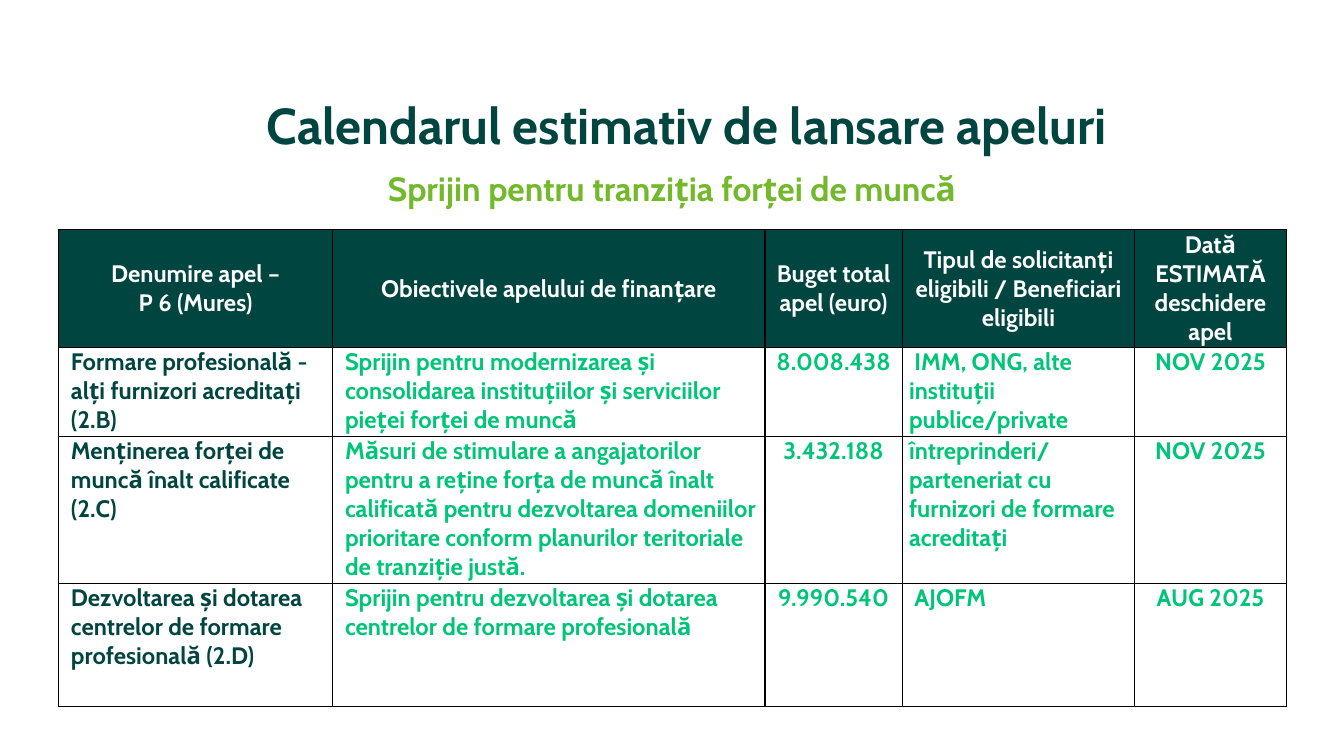
from lxml.etree import SubElement
from pptx import Presentation
from pptx.dml.color import RGBColor
from pptx.enum.text import MSO_ANCHOR, PP_ALIGN
from pptx.oxml.ns import qn
from pptx.util import Pt

COLORS = {"dark": "004540", "lime": "74B92B", "green": "00C578",
          "white": "FFFFFF", "black": "000000"}
FONT = "Cabin"

COLUMN_WIDTHS = [195.8, 308.9, 97.9, 166.3, 108]
ROW_HEIGHTS = [84.2, 63.4, 105.1, 87.8]
# Text colour, left inset and alignment of each body column
COLUMN_STYLES = [
    ("dark", 8.9, PP_ALIGN.LEFT),
    ("green", 8.9, PP_ALIGN.LEFT),
    ("green", 0, PP_ALIGN.CENTER),
    ("green", 5, PP_ALIGN.LEFT),
    ("green", 0, PP_ALIGN.CENTER),
]
HEADER = [
    "Denumire apel –\nP 6 (Mures)",
    "Obiectivele apelului de finanțare",
    "Buget total apel (euro)",
    "Tipul de solicitanți eligibili / Beneficiari eligibili",
    "Dată ESTIMATĂ deschidere apel",
]
CALLS = [
    ["Formare profesională - alți furnizori acreditați (2.B)",
     "Sprijin pentru modernizarea și consolidarea instituțiilor și serviciilor "
     "pieței forței de muncă",
     "8.008.438", " IMM, ONG, alte instituții publice/private", "NOV 2025"],
    ["Menținerea forței de muncă înalt calificate (2.C)",
     "Măsuri de stimulare a angajatorilor pentru a reține forța de muncă înalt "
     "calificată pentru dezvoltarea domeniilor prioritare conform planurilor "
     "teritoriale de tranziție justă.",
     "3.432.188", "întreprinderi/ parteneriat cu furnizori de formare acreditați",
     "NOV 2025"],
    ["Dezvoltarea și dotarea centrelor de formare profesională (2.D)",
     "Sprijin pentru dezvoltarea și dotarea centrelor de formare profesională",
     "9.990.540", " AJOFM", "AUG 2025"],
]


def rgb(name):
    return RGBColor.from_string(COLORS[name])


class SlideBuilder:
    def __init__(self, s):
        self.s = s

    def add_lines(self, tf, text, size, color, align, spacing=None):
        """Fill a text frame with one bold paragraph per line of text."""
        tf.word_wrap = True
        for i, line in enumerate(text.split("\n")):
            p = tf.add_paragraph() if i else tf.paragraphs[0]
            p.alignment = align
            p.line_spacing = spacing
            r = p.add_run()
            r.text = line
            r.font.name = FONT
            r.font.size = Pt(size)
            r.font.bold = True
            r.font.color.rgb = rgb(color)

    def text(self, text, left, top, width, height, size, color,
             anchor=MSO_ANCHOR.TOP, spacing=None):
        box = self.s.shapes.add_textbox(Pt(left), Pt(top), Pt(width), Pt(height))
        box.text_frame.vertical_anchor = anchor
        self.add_lines(box.text_frame, text, size, color, PP_ALIGN.CENTER, spacing)

    def borders(self, cell):
        tcPr = cell._tc.get_or_add_tcPr()
        for i, side in enumerate(("lnL", "lnR", "lnT", "lnB")):
            ln = SubElement(tcPr, qn(f"a:{side}"), w=str(Pt(1)))
            fill = SubElement(ln, qn("a:solidFill"))
            SubElement(fill, qn("a:srgbClr"), val=COLORS["black"])
            tcPr.insert(i, ln)

    def cell(self, cell, text, fill, color, inset, align, anchor):
        cell.margin_left = Pt(inset)
        cell.margin_right = cell.margin_top = cell.margin_bottom = 0
        cell.vertical_anchor = anchor
        cell.fill.solid()
        cell.fill.fore_color.rgb = rgb(fill)
        self.borders(cell)
        self.add_lines(cell.text_frame, text, 17, color, align)

    def table(self, left, top):
        table = self.s.shapes.add_table(
            len(ROW_HEIGHTS), len(COLUMN_WIDTHS), Pt(left), Pt(top),
            Pt(sum(COLUMN_WIDTHS)), Pt(sum(ROW_HEIGHTS))).table
        for column, width in zip(table.columns, COLUMN_WIDTHS):
            column.width = Pt(width)
        for row, height in zip(table.rows, ROW_HEIGHTS):
            row.height = Pt(height)
        for c, title in enumerate(HEADER):
            self.cell(table.cell(0, c), title, "dark", "white", 0,
                      PP_ALIGN.CENTER, MSO_ANCHOR.MIDDLE)
        for r, call in enumerate(CALLS, 1):
            for c, (text, style) in enumerate(zip(call, COLUMN_STYLES)):
                self.cell(table.cell(r, c), text, "white", *style, MSO_ANCHOR.TOP)


def main():
    prs = Presentation()
    prs.slide_width, prs.slide_height = Pt(960), Pt(540)
    slide = SlideBuilder(prs.slides.add_slide(prs.slide_layouts[6]))
    slide.text("Calendarul estimativ de lansare apeluri ", 80.6, 67.7, 828, 48.2,
               36, "dark", MSO_ANCHOR.MIDDLE, 0.9)
    slide.table(41.8, 164.2)
    slide.text("Sprijin pentru tranziția forței de muncă", 240, 116.6, 480, 36,
               24, "lime")
    prs.save("out.pptx")


if __name__ == "__main__":
    main()
